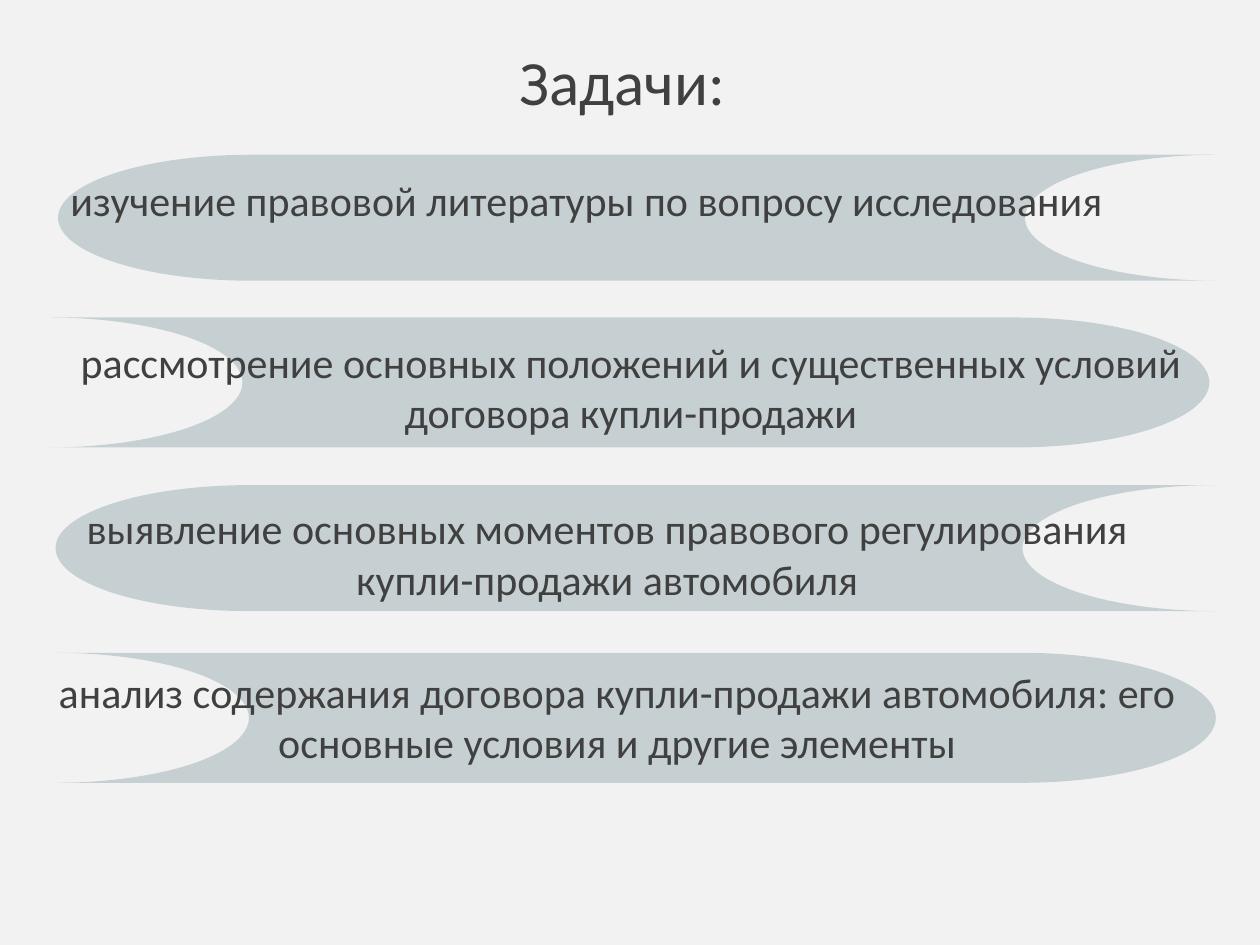
from dataclasses import dataclass

from lxml import etree
from pptx import Presentation
from pptx.dml.color import RGBColor
from pptx.enum.shapes import MSO_SHAPE
from pptx.enum.text import MSO_AUTO_SIZE, PP_ALIGN
from pptx.oxml.ns import qn
from pptx.util import Cm, Pt

STORED_DATA = MSO_SHAPE.FLOWCHART_STORED_DATA
GROW = MSO_AUTO_SIZE.SHAPE_TO_FIT_TEXT
CENTER, JUSTIFY = PP_ALIGN.CENTER, PP_ALIGN.JUSTIFY


@dataclass(frozen=True)
class Theme:
    background: RGBColor = RGBColor(0xF2, 0xF2, 0xF2)
    band: RGBColor = RGBColor(0x9B, 0xAF, 0xB5)
    band_opacity: int = 50
    ink: RGBColor = RGBColor(0x40, 0x40, 0x40)
    font: str = "Calibri"
    title_size: int = 36
    task_size: int = 24


@dataclass(frozen=True)
class Task:
    """One task; positions are in centimetres."""
    wording: str
    band_left: float
    band_top: float
    text_left: float
    text_top: float
    text_height: float = 2.31
    align: PP_ALIGN = CENTER


THEME = Theme()
BAND_WIDTH = 23.39
TEXT_WIDTH = 23.06
TASKS = [
    Task("изучение правовой литературы по вопросу исследования",
         1.17, 3.12, 1.17, 3.4, 1.27, JUSTIFY),
    Task("рассмотрение основных положений и существенных условий "
         "договора купли-продажи", 0.99, 6.4, 1.19, 6.65),
    Task("выявление основных моментов правового регулирования "
         "купли-продажи автомобиля", 1.12, 9.78, 0.71, 10.01),
    Task("анализ содержания договора купли-продажи автомобиля: его "
         "основные условия и другие элементы", 1.12, 13.16, 0.91, 13.31),
]


def add_text(shapes, wording, left, top, width, height, size, align):
    box = shapes.add_textbox(Cm(left), Cm(top), Cm(width), Cm(height))
    frame = box.text_frame
    frame.word_wrap = True
    frame.auto_size = GROW
    paragraph = frame.paragraphs[0]
    paragraph.alignment = align
    run = paragraph.add_run()
    run.text = wording
    run.font.name = THEME.font
    run.font.size = Pt(size)
    run.font.color.rgb = THEME.ink


def add_band(shapes, left, top, height, rotation):
    """Add a translucent band with one rounded and one hollow end."""
    band = shapes.add_shape(STORED_DATA, Cm(left), Cm(top), Cm(BAND_WIDTH), Cm(height))
    band.rotation = rotation
    band.shadow.inherit = False
    band.line.fill.background()
    band.fill.solid()
    band.fill.fore_color.rgb = THEME.band
    color = band.fill._xPr.find(qn("a:solidFill"))[0]
    etree.SubElement(color, qn("a:alpha"), val=str(THEME.band_opacity * 1000))


def add_task(slide, task, flipped):
    group = slide.shapes.add_group_shape()
    height, rotation = (2.62, 180) if flipped else (2.54, 0)
    add_band(group.shapes, task.band_left, task.band_top, height, rotation)
    add_text(group.shapes, task.wording, task.text_left, task.text_top,
             TEXT_WIDTH, task.text_height, THEME.task_size, task.align)


def main():
    deck = Presentation()
    deck.slide_width, deck.slide_height = Cm(25.4), Cm(19.05)
    slide = deck.slides.add_slide(deck.slide_layouts[6])
    slide.background.fill.solid()
    slide.background.fill.fore_color.rgb = THEME.background

    add_text(slide.shapes, "Задачи:", 1.17, 0.74, 22.76, 1.8, THEME.title_size, CENTER)
    for index, task in enumerate(TASKS):
        add_task(slide, task, flipped=index % 2 == 1)
    deck.save("out.pptx")


if __name__ == "__main__":
    main()
